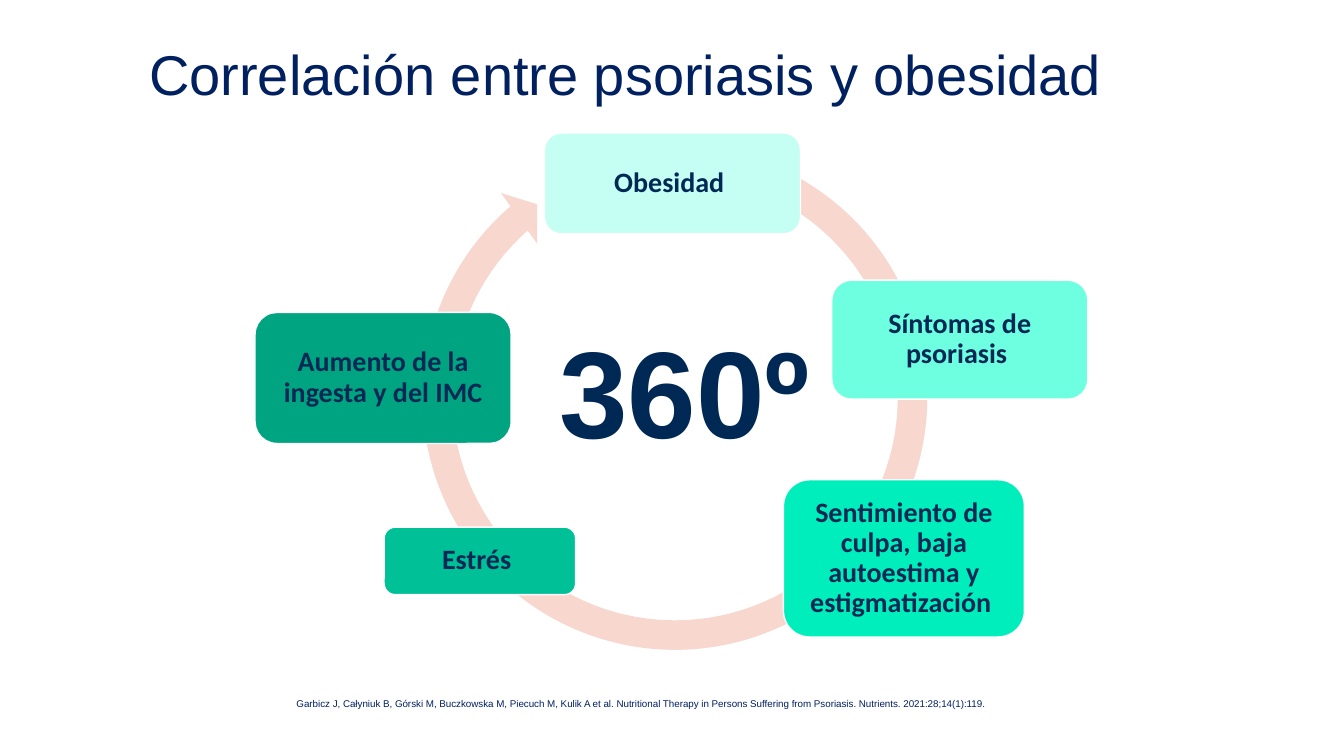
from dataclasses import dataclass

from pptx import Presentation
from pptx.dml.color import RGBColor
from pptx.enum.shapes import MSO_SHAPE as Preset
from pptx.enum.text import MSO_ANCHOR as Anchor, PP_ALIGN as Align
from pptx.util import Inches, Pt

NAVY = "002855"
TITLE_BLUE = "002060"
WHITE = "FFFFFF"
PEACH = "F8D7CE"
ADJUST_PER_DEGREE = 0.6


@dataclass
class Area:
    left: float
    top: float
    width: float
    height: float

    def lengths(self) -> list:
        return [Inches(v) for v in (self.left, self.top, self.width, self.height)]


@dataclass
class Stage:
    text: str
    area: Area
    fill: str


@dataclass
class Label:
    text: str
    area: Area
    size: float
    color: str
    bold: bool = False
    anchor: Anchor = Anchor.TOP


STAGES = [
    Stage("Obesidad ", Area(5.4, 1.32, 2.54, 1), "C5FFF3"),
    Stage("Síntomas de psoriasis ", Area(8.25, 2.78, 2.54, 1.18), "6DFFE0"),
    Stage("Sentimiento de culpa, baja autoestima y estigmatización ",
          Area(7.77, 4.76, 2.39, 1.56), "00EEBB"),
    Stage("Estrés ", Area(3.81, 5.23, 1.9, 0.67), "00C097"),
    Stage("Aumento de la ingesta y del IMC", Area(2.53, 3.1, 2.54, 1.3), "00A481"),
]

LABELS = [
    Label("Garbicz J, Całyniuk B, Górski M, Buczkowska M, Piecuch M, Kulik A et al. "
          "Nutritional Therapy in Persons Suffering from Psoriasis. "
          "Nutrients. 2021:28;14(1):119.",
          Area(1.56, 6.91, 9.59, 0.18), 7, TITLE_BLUE, anchor=Anchor.BOTTOM),
    Label("Correlación entre psoriasis y obesidad",
          Area(0.44, 0.42, 11.52, 0.99), 40, TITLE_BLUE),
    Label("360º", Area(5.2, 3.25, 3.18, 0.99), 88, NAVY, bold=True),
]


def rgb(color: str) -> RGBColor:
    return RGBColor.from_string(color)


def write(shape, text: str, color: str, anchor: Anchor, font: dict) -> None:
    frame = shape.text_frame
    frame.word_wrap = True
    frame.vertical_anchor = anchor
    para = frame.paragraphs[0]
    para.alignment = Align.CENTER
    para.line_spacing = 0.9
    span = para.add_run()
    span.text = text
    for name, value in font.items():
        setattr(span.font, name, value)
    span.font.color.rgb = rgb(color)


def add_filled(page, preset: Preset, area: Area, fill: str):
    shape = page.shapes.add_shape(preset, *area.lengths())
    shape.shadow.inherit = False
    shape.fill.solid()
    shape.fill.fore_color.rgb = rgb(fill)
    return shape


def add_cycle_arrow(page) -> None:
    arrow = add_filled(page, Preset.CIRCULAR_ARROW, Area(4.03, 1.28, 5.33, 5.33), PEACH)
    arrow.line.fill.background()
    # Band thickness, head angle, end angle, start angle, head width
    band, head = 5.5 / 100, 5.8 / 100
    angles = [degrees * ADJUST_PER_DEGREE for degrees in (5.51, 228.99, 290.14)]
    for index, value in enumerate([band, *angles, head]):
        arrow.adjustments[index] = value


def add_stage(page, stage: Stage) -> None:
    box = add_filled(page, Preset.ROUNDED_RECTANGLE, stage.area, stage.fill)
    box.line.color.rgb = rgb(WHITE)
    box.line.width = Pt(1)
    for side in ("left", "top", "right", "bottom"):
        setattr(box.text_frame, f"margin_{side}", Inches(0.08))
    write(box, stage.text, NAVY, Anchor.MIDDLE,
          {"name": "Calibri", "size": Pt(20), "bold": True})


def add_label(page, label: Label) -> None:
    box = page.shapes.add_textbox(*label.area.lengths())
    write(box, label.text, label.color, label.anchor,
          {"name": "Arial", "size": Pt(label.size), "bold": label.bold})


def main() -> None:
    deck = Presentation()
    deck.slide_width, deck.slide_height = Inches(13.33), Inches(7.5)
    page = deck.slides.add_slide(deck.slide_layouts[6])

    # Cycle: ring arrow with the stages on top
    add_cycle_arrow(page)
    for stage in STAGES:
        add_stage(page, stage)

    # Reference, title and central figure
    for label in LABELS:
        add_label(page, label)

    deck.save("out.pptx")


if __name__ == "__main__":
    main()
